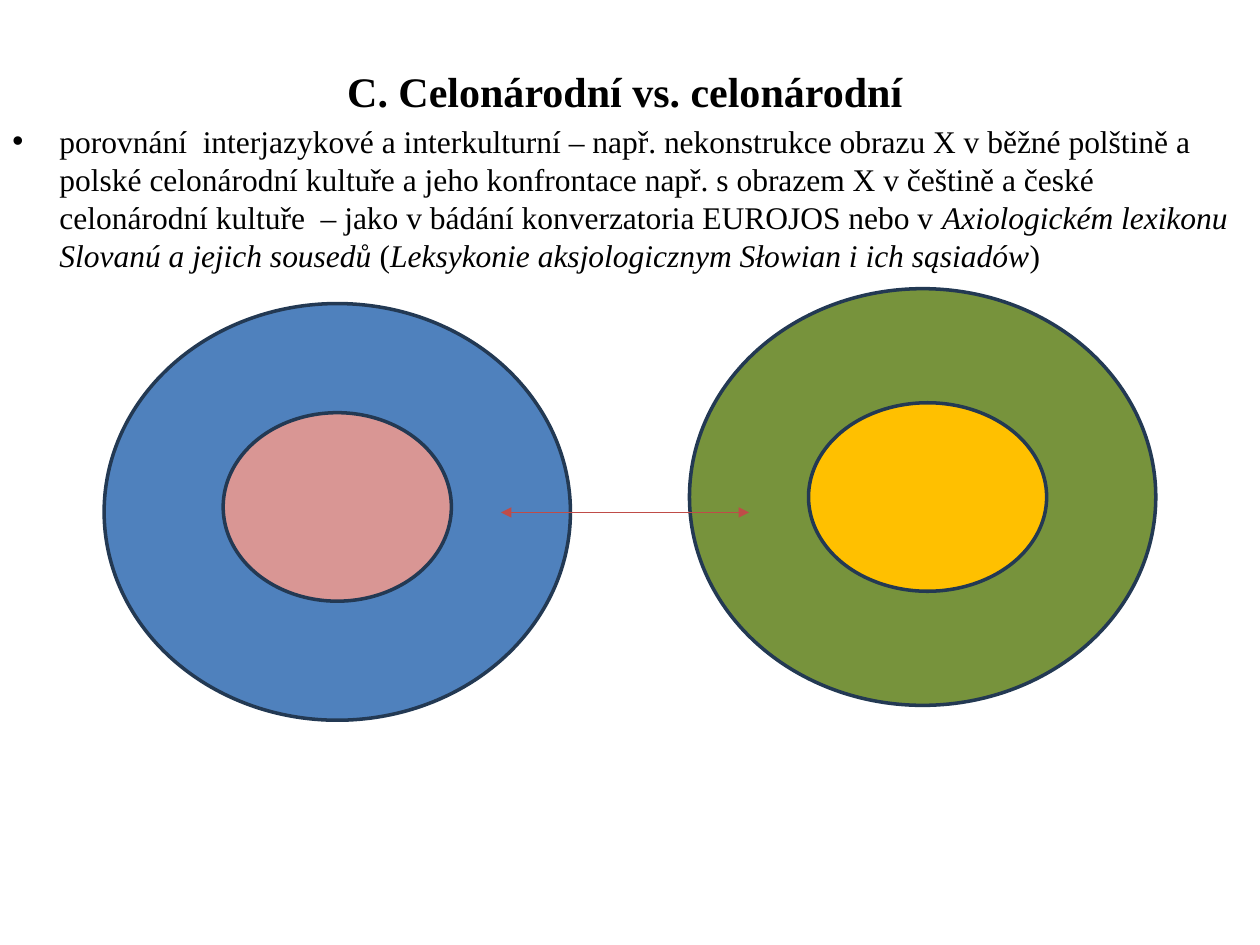
import pptx
import pptx.dml.color
import pptx.enum.shapes
import pptx.enum.text
import pptx.oxml.ns
import pptx.util
from lxml import etree

Cm = pptx.util.Cm
Pt = pptx.util.Pt
FONT = "Times New Roman"
OUTLINE = "233953"


def colour(value):
    return pptx.dml.color.RGBColor.from_string(value)


def add_element(parent, tag, **attributes):
    return etree.SubElement(parent, pptx.oxml.ns.qn(tag), attributes)


def style_paragraph(para, size, bold=False):
    para.font.name = FONT
    para.font.size = Pt(size)
    para.font.bold = bold
    para.font.color.rgb = colour("000000")
    para.space_before = Pt(size * 0.2)


def add_bullet(para, indent):
    properties = para._p.get_or_add_pPr()
    properties.set("marL", str(indent))
    properties.set("indent", str(-indent))
    add_element(properties, "a:buFont", typeface="Arial")
    add_element(properties, "a:buChar", char="•")


def add_text(page, left, top, width, height):
    frame = page.shapes.add_textbox(left, top, width, height).text_frame
    frame.word_wrap = True
    frame.margin_top = Cm(1.32)

    heading = frame.paragraphs[0]
    heading.text = "C. Celonárodní vs. celonárodní "
    heading.alignment = pptx.enum.text.PP_ALIGN.CENTER
    style_paragraph(heading, 24, bold=True)

    para = frame.add_paragraph()
    style_paragraph(para, 18)
    add_bullet(para, Cm(0.95))
    spans = (
        ("porovnání  interjazykové a interkulturní – např. nekonstrukce obrazu X "
         "v běžné polštině a polské celonárodní kultuře a jeho konfrontace např. "
         "s obrazem X v češtině a české celonárodní kultuře  – jako v bádání "
         "konverzatoria EUROJOS nebo v ", False),
        ("Axiologickém lexikonu Slovanú a jejich sousedů ", True),
        ("(", False),
        ("Leksykonie aksjologicznym Słowian i ich sąsiadów", True),
        (")", False),
    )
    for text, italic in spans:
        span = para.add_run()
        span.text = text
        span.font.italic = italic


def add_ellipse(page, left, top, width, height, fill):
    ellipse = page.shapes.add_shape(
        pptx.enum.shapes.MSO_SHAPE.OVAL, left, top, width, height)
    ellipse.shadow.inherit = False
    ellipse.fill.solid()
    ellipse.fill.fore_color.rgb = colour(fill)
    ellipse.line.color.rgb = colour(OUTLINE)
    ellipse.line.width = Pt(2)


def add_culture(page, left, top, core_left, core_top, core_width, fill, core_fill):
    add_ellipse(page, left, top, Cm(9.4), Cm(8.4), fill)
    add_ellipse(page, left + core_left, top + core_top, core_width, Cm(3.8), core_fill)


def add_double_arrow(page, left, top, width):
    arrow = page.shapes.add_connector(
        pptx.enum.shapes.MSO_CONNECTOR.STRAIGHT, left, top, left + width, top)
    arrow.line.color.rgb = colour("BF4C48")
    arrow.line.width = Pt(0.75)
    line = arrow.line._get_or_add_ln()
    for end in ("a:headEnd", "a:tailEnd"):
        add_element(line, end, type="triangle")
    add_element(arrow._element.spPr, "a:effectLst")


def main():
    deck = pptx.Presentation()
    deck.slide_width = Cm(25.4)
    deck.slide_height = Cm(19.05)
    page = deck.slides.add_slide(deck.slide_layouts[6])
    add_text(page, 0, 0, deck.slide_width, deck.slide_height)
    add_culture(page, Cm(2.1), Cm(6.12), Cm(2.4), Cm(2.2), Cm(4.6), "4F81BD", "D99694")
    add_culture(page, Cm(13.9), Cm(5.82), Cm(2.4), Cm(2.3), Cm(4.8), "77933C", "FFC000")
    add_double_arrow(page, Cm(10.1), Cm(10.33), Cm(5))
    deck.save("out.pptx")


if __name__ == "__main__":
    main()
